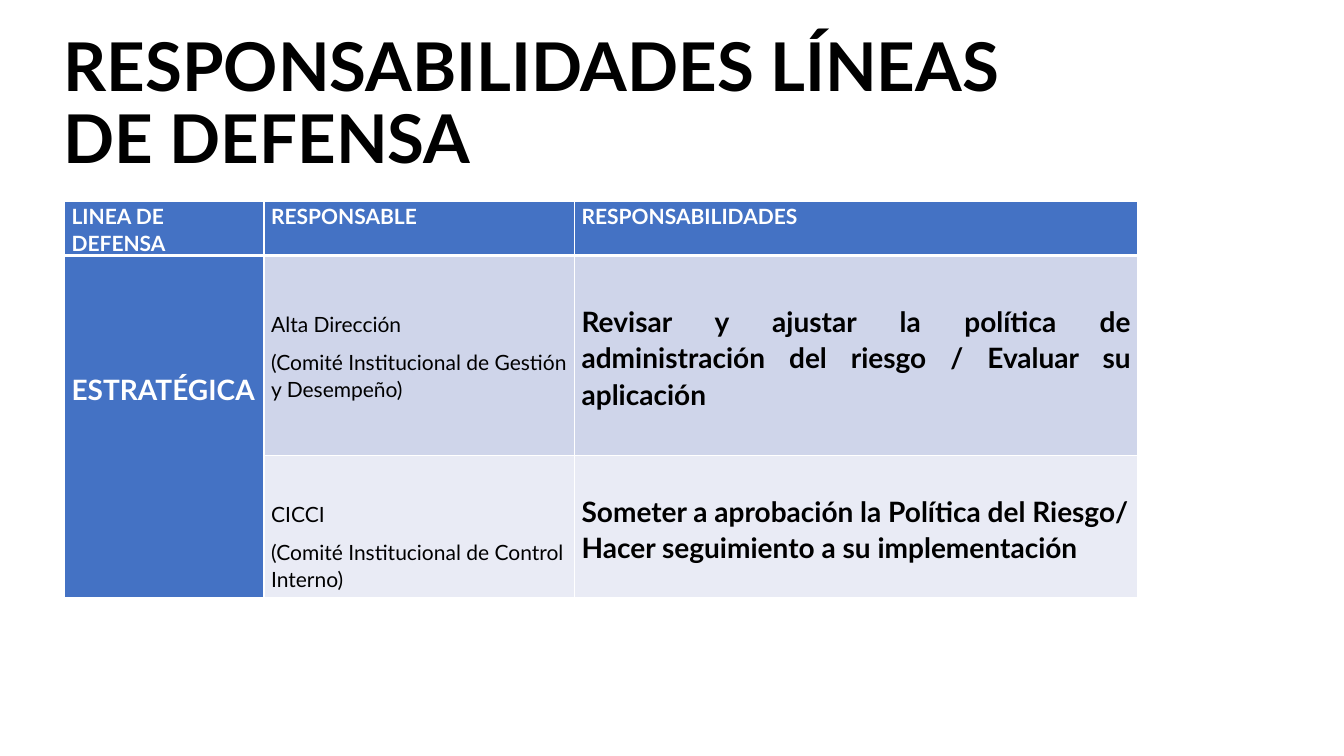
from dataclasses import dataclass
from typing import Any

from lxml import etree
from pptx import Presentation
from pptx.dml.color import RGBColor
from pptx.enum.text import MSO_ANCHOR, MSO_AUTO_SIZE, PP_ALIGN
from pptx.oxml.ns import qn
from pptx.util import Inches, Pt

TOP, MIDDLE = MSO_ANCHOR.TOP, MSO_ANCHOR.MIDDLE
LEFT, JUSTIFY = PP_ALIGN.LEFT, PP_ALIGN.JUSTIFY
NO_AUTOFIT = MSO_AUTO_SIZE.NONE

SLIDE_WIDTH, SLIDE_HEIGHT = Inches(13.33), Inches(7.5)
WHITE, BLACK, BLUE, LAVENDER, PALE = "FFFFFF", "000000", "4472C4", "CFD5EA", "E9EBF5"
COLUMN_SHARES = (14.85, 23.1, 41.93)
ROW_SHARES = (7.1, 26.5, 18.7)
HEADINGS = ("LINEA DE DEFENSA", "RESPONSABLE", "RESPONSABILIDADES")


@dataclass(frozen=True)
class Entry:
    row: int
    column: int
    lines: tuple[str, ...]
    fill: str
    size: int = 15
    color: str = BLACK
    bold: bool = False
    anchor: Any = TOP
    align: Any = LEFT
    top_share: float = 0
    space_after: int = 8


ENTRIES = [
    *(Entry(0, column, (heading,), BLUE, color=WHITE, bold=True)
      for column, heading in enumerate(HEADINGS)),
    Entry(1, 0, ("ESTRATÉGICA",), BLUE, 20, WHITE, True, top_share=15.2),
    Entry(1, 1, ("Alta Dirección", "(Comité Institucional de Gestión y Desempeño)"),
          LAVENDER, anchor=MIDDLE),
    Entry(1, 2, ("Revisar y ajustar la política de administración del riesgo / "
                 "Evaluar su aplicación",),
          LAVENDER, 20, bold=True, align=JUSTIFY, top_share=6.25),
    Entry(2, 1, ("CICCI", "(Comité Institucional de Control Interno)"),
          PALE, anchor=MIDDLE, top_share=5.05),
    Entry(2, 2, ("Someter a aprobación la Política del Riesgo/ "
                 "Hacer seguimiento a su implementación",),
          PALE, 20, bold=True, top_share=4.8, space_after=0),
]


def across(share: float) -> int:
    return round(SLIDE_WIDTH * share / 100)


def down(share: float) -> int:
    return round(SLIDE_HEIGHT * share / 100)


def rgb(color: str) -> RGBColor:
    return RGBColor.from_string(color)


def apply(target: Any, formats: dict[str, Any]) -> None:
    for attribute, value in formats.items():
        setattr(target, attribute, value)


def style_font(font: Any, size: int, color: str, bold: bool) -> None:
    apply(font, {"name": "Lato", "size": Pt(size), "bold": bold})
    font.color.rgb = rgb(color)


def draw_borders(cell: Any, row: int) -> None:
    points = {"L": 1, "R": 1, "T": 3 if row == 1 else 1, "B": 3 if row == 0 else 1}
    properties = cell._tc.get_or_add_tcPr()
    for position, (side, width) in enumerate(points.items()):
        border = etree.Element(qn(f"a:ln{side}"), w=str(Pt(width)))
        fill = etree.SubElement(border, qn("a:solidFill"))
        etree.SubElement(fill, qn("a:srgbClr"), val=WHITE)
        properties.insert(position, border)


def draw_entry(table: Any, entry: Entry) -> None:
    cell = table.cell(entry.row, entry.column)
    apply(cell, {
        "text": "\n".join(entry.lines), "vertical_anchor": entry.anchor,
        "margin_left": across(0.53), "margin_right": across(0.53),
        "margin_top": down(entry.top_share), "margin_bottom": 0,
    })
    for paragraph in cell.text_frame.paragraphs:
        apply(paragraph, {"alignment": entry.align, "line_spacing": 1.07,
                          "space_after": Pt(entry.space_after)})
        style_font(paragraph.runs[0].font, entry.size, entry.color, entry.bold)
    cell.fill.solid()
    cell.fill.fore_color.rgb = rgb(entry.fill)
    draw_borders(cell, entry.row)


def draw_title(title: Any) -> None:
    apply(title, {"left": across(3.98), "top": down(7.73),
                  "width": across(79), "height": down(12.53)})
    apply(title.text_frame, {"text": "RESPONSABILIDADES LÍNEAS DE DEFENSA",
                             "word_wrap": True, "auto_size": NO_AUTOFIT,
                             "vertical_anchor": MIDDLE})
    heading = title.text_frame.paragraphs[0]
    apply(heading, {"alignment": LEFT, "line_spacing": 0.9})
    style_font(heading.runs[0].font, 48, BLACK, True)


def draw_defense_lines(slide: Any) -> None:
    table = slide.shapes.add_table(
        len(ROW_SHARES), len(COLUMN_SHARES), across(4.8), down(26.67),
        across(sum(COLUMN_SHARES)), down(sum(ROW_SHARES))).table
    for column, share in zip(table.columns, COLUMN_SHARES):
        column.width = across(share)
    for row, share in zip(table.rows, ROW_SHARES):
        row.height = down(share)
    table.cell(1, 0).merge(table.cell(2, 0))
    for entry in ENTRIES:
        draw_entry(table, entry)


def main() -> None:
    presentation = Presentation()
    apply(presentation, {"slide_width": SLIDE_WIDTH, "slide_height": SLIDE_HEIGHT})
    slide = presentation.slides.add_slide(presentation.slide_layouts[5])
    draw_title(slide.shapes.title)
    draw_defense_lines(slide)
    presentation.save("out.pptx")


if __name__ == "__main__":
    main()
